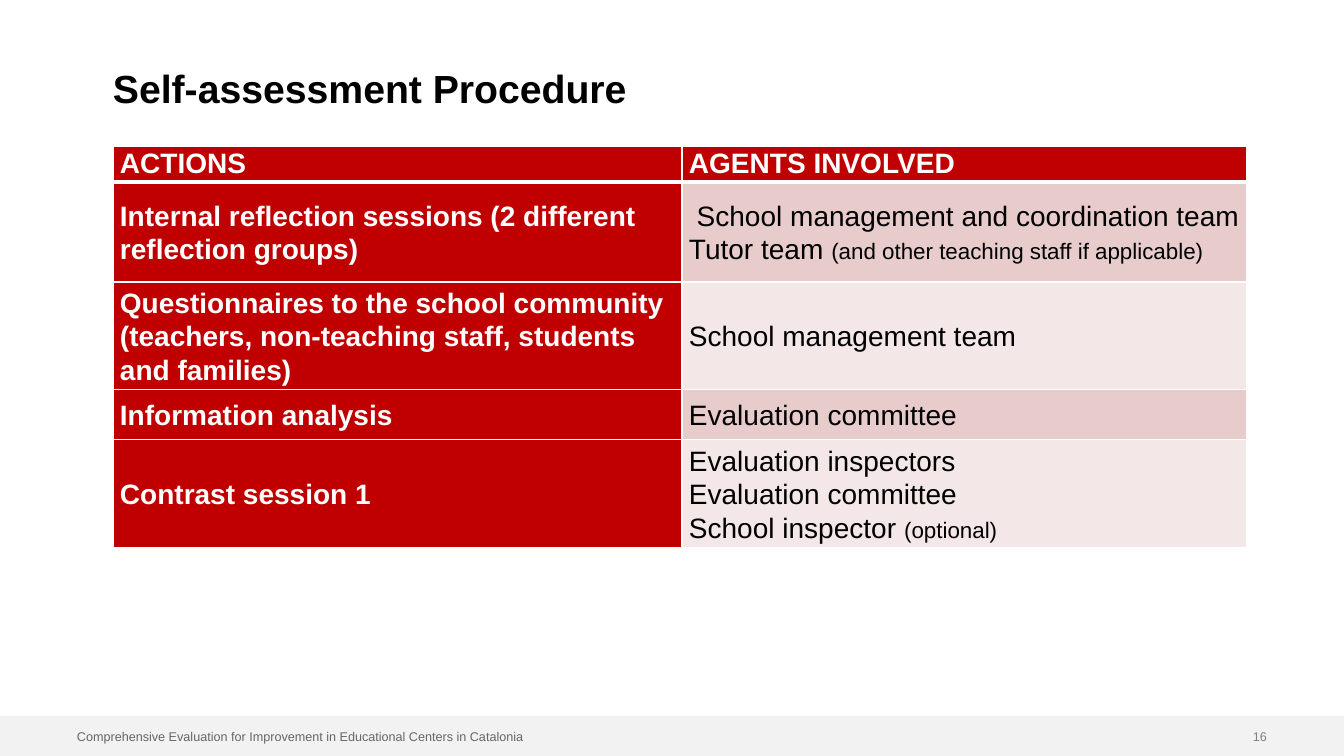
import pptx
import pptx.dml.color
import pptx.enum.shapes
import pptx.enum.text
import pptx.oxml
import pptx.oxml.ns
import pptx.util
from lxml import etree

RGBColor = pptx.dml.color.RGBColor
Align = pptx.enum.text.PP_ALIGN
Anchor = pptx.enum.text.MSO_ANCHOR

WHITE = RGBColor(0xFF, 0xFF, 0xFF)
BLACK = RGBColor(0x00, 0x00, 0x00)
RED = RGBColor(0xC0, 0x00, 0x00)
DARK_PINK = RGBColor(0xE8, 0xCC, 0xCC)
LIGHT_PINK = RGBColor(0xF4, 0xE7, 0xE7)
BAR_GREY = RGBColor(0xF2, 0xF2, 0xF2)
NUMBER_GREY = RGBColor(0x80, 0x80, 0x80)
FOOTER_GREY = RGBColor(0x66, 0x66, 0x66)

FONT = "Arial"
PX = 914400 / 100.8
SLIDE_SIZE = (1344, 756)
FOOTER_BAR = (0, 716, 1344, 40)

LABELS = [
    ("Self-assessment Procedure", (113, 70, 1186, 47), 28, True, BLACK, Align.LEFT),
    ("Comprehensive Evaluation for Improvement in Educational Centers in Catalonia",
     (77, 731, 533, 12), 9, False, FOOTER_GREY, Align.LEFT),
    ("16", (1075, 731, 192, 13), 9, False, NUMBER_GREY, Align.RIGHT),
]

TABLE_ORIGIN = (113, 146)
COLUMN_WIDTHS = [569, 565]
ROW_HEIGHTS = [33, 100, 100, 50, 100]
CELL_MARGIN = 7
MAIN_SIZE = 20
NOTE_SIZE = 16
ROWS = [
    ("ACTIONS", [("AGENTS INVOLVED",)]),
    ("Internal reflection sessions (2 different reflection groups)",
     [(" School management and coordination team",),
      ("Tutor team ", "(and other teaching staff if applicable)")]),
    ("Questionnaires to the school community (teachers, non-teaching staff, students and families)",
     [("School management team",)]),
    ("Information analysis", [("Evaluation committee",)]),
    ("Contrast session 1",
     [("Evaluation inspectors",), ("Evaluation committee",),
      ("School inspector ", "(optional)")]),
]


def px(value):
    return pptx.util.Emu(round(value * PX))


def add_run(paragraph, text, size, bold, color):
    run = paragraph.add_run()
    run.text = text
    run.font.name = FONT
    run.font.size = pptx.util.Pt(size)
    run.font.bold = bold
    run.font.color.rgb = color


def add_label(slide, text, box, size, bold, color, alignment):
    frame = slide.shapes.add_textbox(*map(px, box)).text_frame
    frame.word_wrap = True
    frame.margin_left = frame.margin_right = 0
    frame.margin_top = frame.margin_bottom = 0
    paragraph = frame.paragraphs[0]
    paragraph.alignment = alignment
    paragraph.line_spacing = 0.9
    add_run(paragraph, text, size, bold, color)


def set_borders(cell, widths):
    properties = cell._tc.get_or_add_tcPr()
    for index, (side, width) in enumerate(widths.items()):
        line = etree.Element(pptx.oxml.ns.qn("a:" + side), w=str(pptx.util.Pt(width)))
        fill = etree.SubElement(line, pptx.oxml.ns.qn("a:solidFill"))
        etree.SubElement(fill, pptx.oxml.ns.qn("a:srgbClr"), val=str(WHITE))
        properties.insert(index, line)


def fill_cell(cell, lines, fill, bold, color, anchor):
    cell.fill.solid()
    cell.fill.fore_color.rgb = fill
    cell.vertical_anchor = anchor
    cell.margin_left = cell.margin_right = px(CELL_MARGIN)
    cell.margin_top = cell.margin_bottom = 0
    frame = cell.text_frame
    for index, parts in enumerate(lines):
        paragraph = frame.add_paragraph() if index else frame.paragraphs[0]
        paragraph.line_spacing = 1.07
        for text, size in zip(parts, (MAIN_SIZE, NOTE_SIZE)):
            add_run(paragraph, text, size, bold, color)


def add_actions_table(slide):
    size = (sum(COLUMN_WIDTHS), sum(ROW_HEIGHTS))
    table = slide.shapes.add_table(
        len(ROWS), len(COLUMN_WIDTHS), *map(px, TABLE_ORIGIN + size)).table
    for column, width in zip(table.columns, COLUMN_WIDTHS):
        column.width = px(width)
    for index, (action, agents) in enumerate(ROWS):
        table.rows[index].height = px(ROW_HEIGHTS[index])
        header = index == 0
        anchor = Anchor.TOP if header else Anchor.MIDDLE
        band = DARK_PINK if index % 2 else LIGHT_PINK
        action_cell, agents_cell = table.cell(index, 0), table.cell(index, 1)
        fill_cell(action_cell, [(action,)], RED, True, WHITE, anchor)
        fill_cell(agents_cell, agents, RED if header else band, header,
                  WHITE if header else BLACK, anchor)
        borders = {"lnL": 1, "lnR": 1, "lnT": 3 if index == 1 else 1,
                   "lnB": 3 if header else 1}
        for cell in (action_cell, agents_cell):
            set_borders(cell, borders)


def main():
    presentation = pptx.Presentation()
    presentation.slide_width, presentation.slide_height = map(px, SLIDE_SIZE)
    slide = presentation.slides.add_slide(presentation.slide_layouts[6])

    footer_bar = slide.shapes.add_shape(
        pptx.enum.shapes.MSO_SHAPE.RECTANGLE, *map(px, FOOTER_BAR))
    footer_bar.shadow.inherit = False
    footer_bar.fill.solid()
    footer_bar.fill.fore_color.rgb = BAR_GREY
    footer_bar.line.fill.background()

    for label in LABELS:
        add_label(slide, *label)
    add_actions_table(slide)
    presentation.save("out.pptx")


if __name__ == "__main__":
    main()
